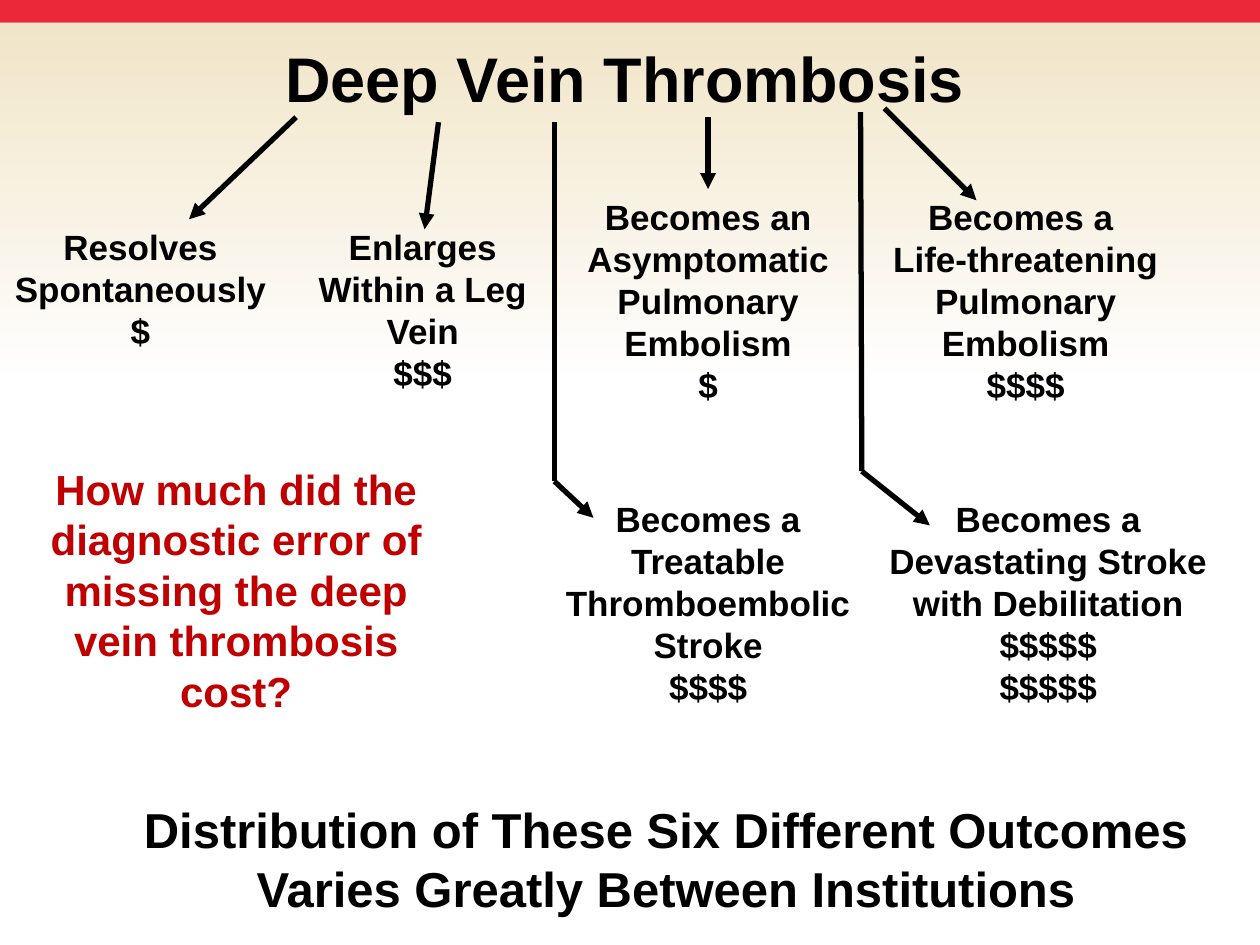
from pptx import Presentation
from pptx.dml.color import RGBColor
from pptx.enum.shapes import MSO_CONNECTOR, MSO_SHAPE
from pptx.enum.text import MSO_ANCHOR, MSO_AUTO_SIZE, PP_ALIGN
from pptx.oxml.ns import qn
from pptx.util import Inches, Pt
from lxml import etree

RECTANGLE = MSO_SHAPE.RECTANGLE
STRAIGHT = MSO_CONNECTOR.STRAIGHT
CENTER = PP_ALIGN.CENTER
MIDDLE = MSO_ANCHOR.MIDDLE
GROW = MSO_AUTO_SIZE.SHAPE_TO_FIT_TEXT
TITLE_ONLY = 5

FONT = "Arial"
BLACK, RED, WHITE = "000000", "C00000", "FFFFFF"
BANNER, SAND = "EA2839", "F1E5C8"

OUTCOMES = [
    ((4.22, 1.5, 2.8, 1.78), ["Becomes an Asymptomatic Pulmonary Embolism", "$"]),
    ((2.35, 1.74, 2.01, 1.45), ["Enlarges", "Within a Leg Vein", "$$$"]),
    ((0, 1.74, 2.23, 1.11), ["Resolves", "Spontaneously", "$"]),
    ((6.74, 1.5, 2.8, 1.78), ["Becomes a ", "Life-threatening Pulmonary Embolism", "$$$$"]),
    ((4.22, 3.9, 2.8, 1.78), ["Becomes a Treatable Thromboembolic Stroke", "$$$$"]),
    ((6.92, 3.9, 2.8, 1.78), ["Becomes a Devastating Stroke with Debilitation", "$$$$$", "$$$$$"]),
]

ARROW_ROUTES = [
    [(2.35, 0.93), (1.5, 1.74)],
    [(3.48, 0.97), (3.37, 1.82)],
    [(5.62, 0.93), (5.62, 1.5)],
    [(7.02, 0.86), (7.75, 1.59)],
    [(4.4, 0.97), (4.4, 3.82), (4.71, 4.11)],
    [(6.83, 0.89), (6.84, 3.74), (7.38, 4.17)],
]


def color(value):
    """Return the colour for a hex string."""
    return RGBColor.from_string(value)


def lengths(values):
    """Turn numbers of inches into lengths."""
    return [Inches(value) for value in values]


def write_text(text_frame, lines, size, text_color=BLACK):
    """Fill a text frame with centred bold paragraphs."""
    text_frame.text = "\n".join(lines)
    for paragraph in text_frame.paragraphs:
        paragraph.alignment = CENTER
        for run in paragraph.runs:
            run.font.name = FONT
            run.font.size = Pt(size)
            run.font.bold = True
            run.font.color.rgb = color(text_color)


def add_band(slide, box, start, end=None):
    """Add a borderless band, solid or fading downwards to a second colour."""
    band = slide.shapes.add_shape(RECTANGLE, *lengths(box))
    band.shadow.inherit = False
    band.line.fill.background()
    if end is None:
        band.fill.solid()
        band.fill.fore_color.rgb = color(start)
    else:
        band.fill.gradient()
        band.fill.gradient_angle = 270
        for stop, value in zip(band.fill.gradient_stops, (start, end)):
            stop.color.rgb = color(value)


def place_title(slide, box, text):
    """Place the title placeholder in front of the bands."""
    title = slide.shapes.title
    title.element.getparent().append(title.element)
    title.left, title.top, title.width, title.height = lengths(box)
    text_frame = title.text_frame
    text_frame.margin_left = text_frame.margin_right = 0
    text_frame.margin_top = text_frame.margin_bottom = 0
    text_frame.vertical_anchor = MIDDLE
    write_text(text_frame, [text], 36)


def add_text(slide, box, lines, size, text_color=BLACK):
    """Add a wrapping text box."""
    text_frame = slide.shapes.add_textbox(*lengths(box)).text_frame
    text_frame.word_wrap = True
    text_frame.auto_size = GROW
    write_text(text_frame, lines, size, text_color)


def add_route(slide, points):
    """Join points with straight lines, the last one with an arrowhead."""
    for start, end in zip(points, points[1:]):
        connector = slide.shapes.add_connector(STRAIGHT, *lengths(start + end))
        connector.line.width = Pt(3)
        connector.line.color.rgb = color(BLACK)
        properties = connector.element.spPr
        etree.SubElement(properties, qn("a:effectLst"))
        if end == points[-1]:
            line = properties.find(qn("a:ln"))
            etree.SubElement(line, qn("a:tailEnd"), type="triangle")


def build_outcomes_slide(presentation):
    """Build the slide of thrombosis outcomes and their costs."""
    slide = presentation.slides.add_slide(presentation.slide_layouts[TITLE_ONLY])
    add_band(slide, (0, 0.18, 10, 2.88), SAND, WHITE)
    add_band(slide, (0, 0, 10, 0.18), BANNER)
    place_title(slide, (0.71, 0.26, 8.5, 0.7), "Deep Vein Thrombosis")
    for box, lines in OUTCOMES:
        add_text(slide, box, lines, 20)
    question = "How much did the diagnostic error of missing the deep vein thrombosis cost?"
    add_text(slide, (0.21, 3.63, 3.33, 2.12), [question], 24, RED)
    conclusion = "Distribution of These Six Different Outcomes Varies Greatly Between Institutions"
    add_text(slide, (0.85, 6.3, 8.87, 1.04), [conclusion], 28)
    for points in ARROW_ROUTES:
        add_route(slide, points)


def main():
    """Create and save the presentation."""
    presentation = Presentation()
    presentation.slide_width = Inches(10)
    presentation.slide_height = Inches(7.5)
    build_outcomes_slide(presentation)
    presentation.save("out.pptx")


if __name__ == "__main__":
    main()
